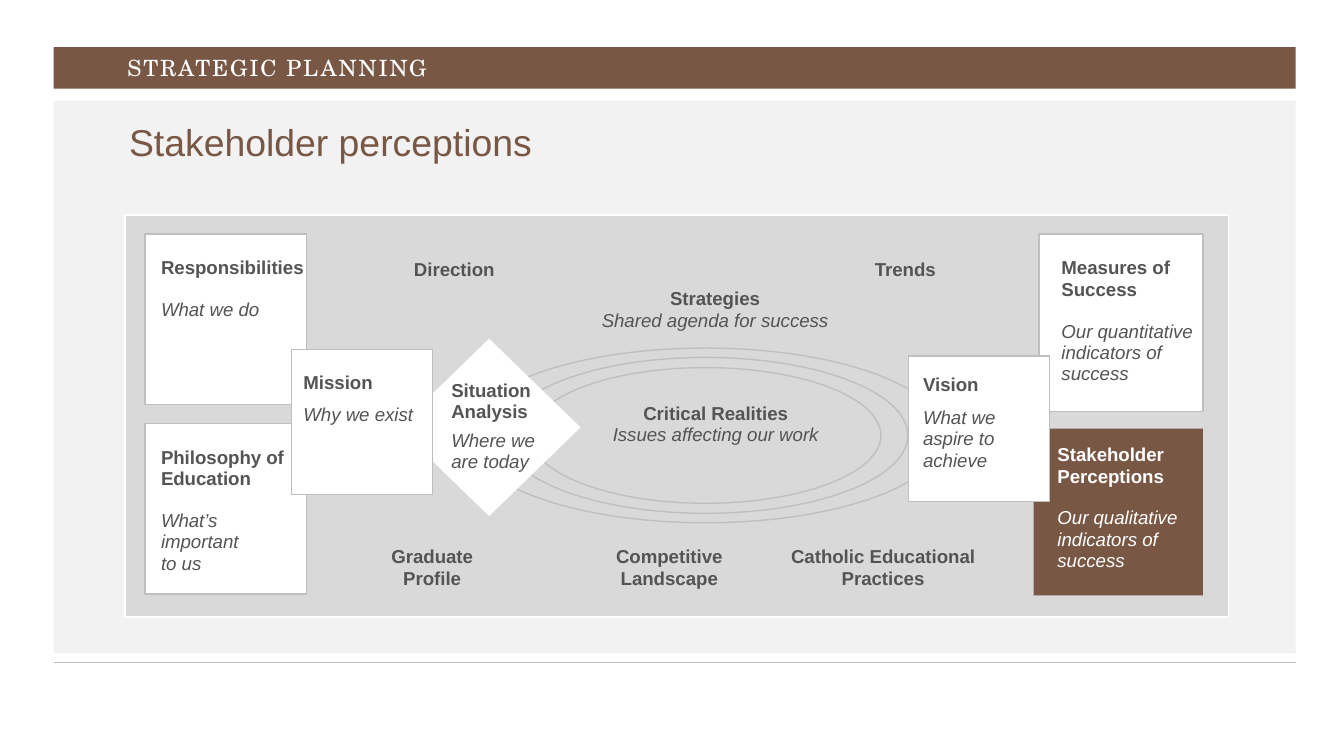
from dataclasses import dataclass

from lxml.etree import SubElement
from pptx import Presentation
from pptx.dml.color import RGBColor
from pptx.enum.shapes import MSO_CONNECTOR, MSO_SHAPE as SHAPE
from pptx.enum.text import MSO_ANCHOR as ANCHOR, MSO_AUTO_SIZE, PP_ALIGN as ALIGN
from pptx.oxml.ns import qn
from pptx.util import Inches, Pt


@dataclass(frozen=True)
class Theme:
    brown: str = "785744"
    white: str = "FFFFFF"
    panel: str = "F2F2F2"
    board: str = "D9D9D9"
    rule: str = "BFBFBF"
    ink: str = "545454"
    sans: str = "Arial"
    serif: str = "TeX Gyre Schola"
    body: float = 10
    banner: float = 12
    title: float = 20
    line: float = 0.75


T = Theme()
WIDTH, HEIGHT = Inches(10), Inches(5.625)
COLS, ROWS = 100, 56.25


def cell(col, row, cols, rows):
    x, y = WIDTH / COLS, HEIGHT / ROWS
    return [round(v) for v in (col * x, row * y, cols * x, rows * y)]


def add_block(shapes, kind, area, fill=None, line=None):
    sp = shapes.add_shape(kind, *cell(*area))
    sp.shadow.inherit = False
    if fill:
        sp.fill.solid()
        sp.fill.fore_color.rgb = RGBColor.from_string(fill)
    else:
        sp.fill.background()
    if line:
        sp.line.color.rgb = RGBColor.from_string(line)
        sp.line.width = Pt(T.line)
    else:
        sp.line.fill.background()
    return sp


def add_rule(s, col, row, cols):
    x, y, w, _ = cell(col, row, cols, 0)
    line = s.shapes.add_connector(MSO_CONNECTOR.STRAIGHT, x, y, x + w, y)
    line.line.color.rgb = RGBColor.from_string(T.rule)
    line.line.width = Pt(T.line)
    SubElement(line.element.spPr, qn("a:effectLst"))


def style(p, size, color, font=T.sans, bold=False, italic=False,
          align=ALIGN.LEFT, spacing=0.95):
    p.alignment = align
    p.line_spacing = spacing
    p.space_before = Pt(0)
    p.font.name = font
    p.font.size = Pt(size)
    p.font.bold = bold
    p.font.italic = italic
    p.font.color.rgb = RGBColor.from_string(color)


def add_text(s, area):
    tf = s.shapes.add_textbox(*cell(*area)).text_frame
    tf.word_wrap = True
    return tf


def add_label(s, area, heading, note=None, gap=0, color=T.ink, align=ALIGN.LEFT):
    tf = add_text(s, area)
    p = tf.paragraphs[0]
    p.text = heading
    style(p, T.body, color, bold=True, align=align)
    if note:
        p = tf.add_paragraph()
        p.text = note
        style(p, T.body, color, italic=True, align=align)
        p.space_before = Pt(gap)


def add_card(s, area, text_area, heading, note, gap, kind=SHAPE.RECTANGLE,
             fill=T.white, line=T.rule, color=T.ink):
    add_block(s.shapes, kind, area, fill, line)
    add_label(s, text_area, heading, note, gap, color)


def add_rings(s, center_col, center_row, sizes):
    group = s.shapes.add_group_shape()
    for w, h in sizes:
        area = (center_col - w / 2, center_row - h / 2, w, h)
        add_block(group.shapes, SHAPE.OVAL, area, line=T.rule)


def add_banner(s, text):
    add_block(s.shapes, SHAPE.RECTANGLE, (4, 3.5, 92.4, 3.1), T.brown)
    tf = add_text(s, (8.5, 3.1, 38.9, 4.1))
    tf.vertical_anchor = ANCHOR.MIDDLE
    p = tf.paragraphs[0]
    r = p.add_run()
    r.text = text
    r.font.element.set("spc", "100") if hasattr(r.font, "element") else \
        r._r.get_or_add_rPr().set("spc", "100")
    style(p, T.banner, T.white, T.serif, spacing=0.85)


def add_title(s, text):
    sp = s.shapes.title
    sp.left, sp.top, sp.width, sp.height = cell(8.6, 8.4, 39.4, 4.8)
    s.shapes.element.append(sp.element)
    tf = sp.text_frame
    tf.text = text
    tf.word_wrap = True
    tf.auto_size = MSO_AUTO_SIZE.NONE
    tf.vertical_anchor = ANCHOR.MIDDLE
    style(tf.paragraphs[0], T.title, T.brown, spacing=0.85)


def add_outcomes(s):
    gap = T.body * 1.1
    add_card(s, (77.3, 17.4, 12.2, 13.2), (78, 18.7, 12.6, 10.4),
             "Measures of Success", "Our quantitative indicators of success", gap)
    add_card(s, (76.9, 31.9, 12.6, 12.4), (77.7, 32.6, 12.6, 11.2),
             "Stakeholder Perceptions", "Our qualitative indicators of success", gap,
             fill=T.brown, line=None, color=T.white)


def add_center(s):
    add_rings(s, 52.5, 32.4, [(35.6, 13), (30.1, 11.6), (26.1, 10.1)])
    add_card(s, (67.6, 26.5, 10.5, 10.8), (67.7, 27.4, 11.3, 8.6),
             "Vision", "What we aspire to achieve", 6)
    add_label(s, (40.6, 29.5, 25.3, 6.9), "Critical Realities",
              "Issues affecting our work", align=ALIGN.CENTER)
    add_label(s, (40.7, 21, 25, 5.9), "Strategies",
              "Shared agenda for success", align=ALIGN.CENTER)
    add_card(s, (29.6, 25.2, 13.6, 13.2), (32.6, 27.8, 9.6, 9.6),
             "Situation Analysis", "Where we\vare today", 4,
             kind=SHAPE.DIAMOND, line=None)


def add_foundations(s):
    notes = [("Responsibilities", "What we do"),
             ("Philosophy of Education", "What’s\vimportant\vto us")]
    for i, (heading, note) in enumerate(notes):
        row = 17.4 + 14.1 * i
        add_card(s, (10.8, row, 12, 12.7), (11, row + 1.3, 13, 10),
                 heading, note, T.body * 1.1)
    add_card(s, (21.7, 26, 10.5, 10.8), (21.6, 27.2, 11.3, 8.6),
             "Mission", "Why we exist", 6)


def add_topics(s):
    topics = [("Direction", 28.1, 18.8, 11.4, 2.6),
              ("Trends", 61.9, 18.8, 10.9, 2.6),
              ("Graduate Profile", 26.4, 40.2, 11.5, 4.2),
              ("Competitive Landscape", 41.3, 40.2, 17, 4.2),
              ("Catholic Educational Practices", 57.5, 40.2, 16.4, 4.2)]
    for heading, *area in topics:
        add_label(s, area, heading, align=ALIGN.CENTER)


def main():
    prs = Presentation()
    prs.slide_width, prs.slide_height = WIDTH, HEIGHT
    s = prs.slides.add_slide(prs.slide_layouts[5])
    add_block(s.shapes, SHAPE.RECTANGLE, (4, 7.5, 92.4, 41.1), T.panel)
    add_banner(s, "STRATEGIC PLANNING")
    add_rule(s, 4, 49.3, 92.4)
    add_title(s, "Stakeholder perceptions")
    add_block(s.shapes, SHAPE.RECTANGLE, (9.3, 16, 82.1, 29.9), T.board, T.white)
    add_outcomes(s)
    add_center(s)
    add_foundations(s)
    add_topics(s)
    prs.save("out.pptx")


if __name__ == "__main__":
    main()
